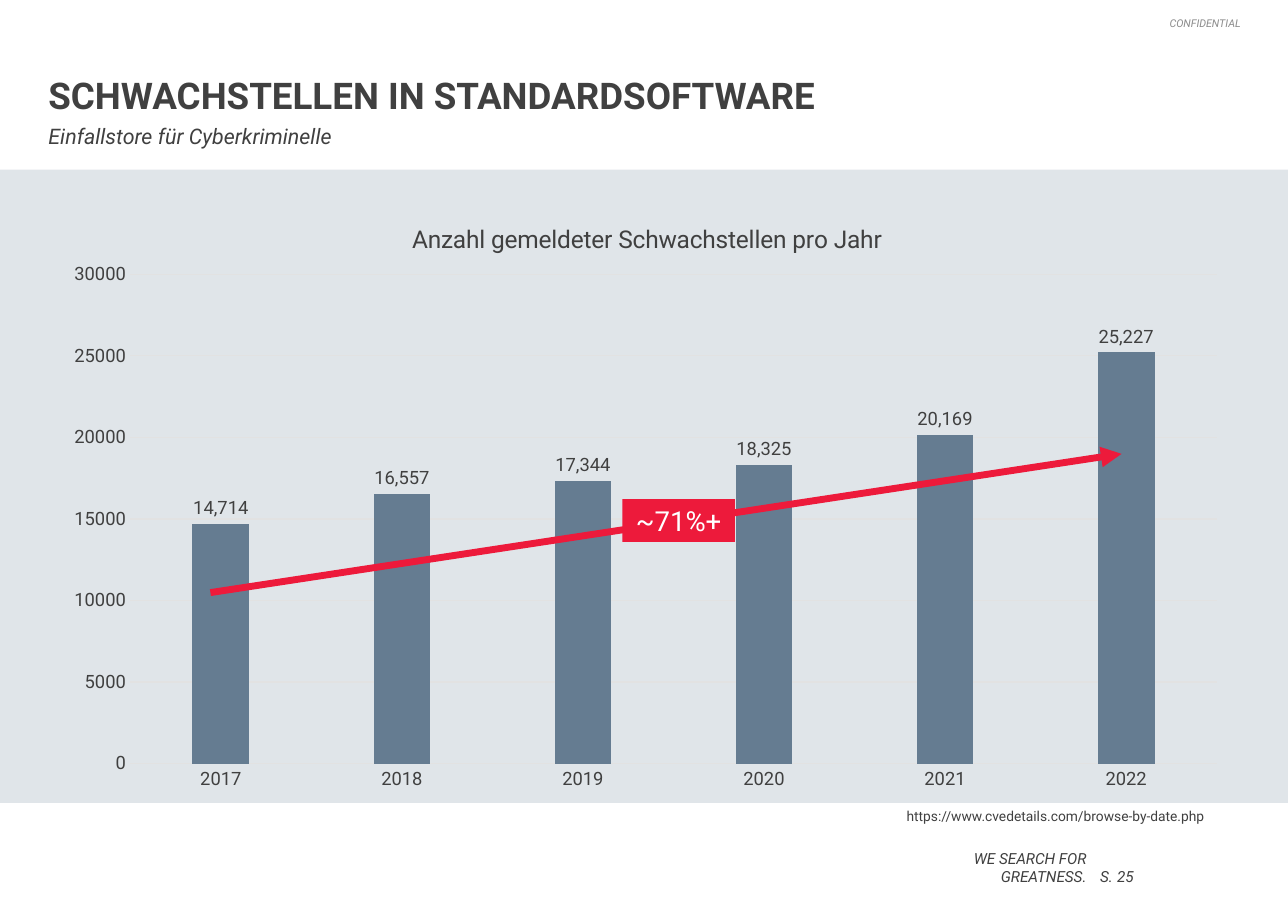
import pptx
import pptx.chart.data
import pptx.dml.color
import pptx.enum.chart
import pptx.enum.shapes
import pptx.enum.text
import pptx.oxml
import pptx.oxml.ns
import pptx.util
import lxml.etree

COLOURS = {
    "text": "404040",
    "band": "E0E5E9",
    "bar": "657C91",
    "grid": "E2E2E2",
    "accent": "ED1A3B",
    "white": "FFFFFF",
}
COLOURS = {name: pptx.dml.color.RGBColor.from_string(value) for name, value in COLOURS.items()}
FONT = "Roboto"
ALIGN = pptx.enum.text.PP_ALIGN
ANCHOR = pptx.enum.text.MSO_ANCHOR
qn = pptx.oxml.ns.qn

deck = pptx.Presentation()
deck.slide_width = pptx.util.Inches(11.69)
deck.slide_height = pptx.util.Inches(8.27)
page = deck.slides.add_slide(deck.slide_layouts[1])


def share(left, top, width, height):
    across, down = deck.slide_width / 100, deck.slide_height / 100
    return [round(part) for part in (left * across, top * down, width * across, height * down)]


def write(box, text, size, align=ALIGN.LEFT, anchor=ANCHOR.TOP, inset=0,
          colour="text", bold=False, italic=False, wrap=True):
    frame = box.text_frame
    frame.auto_size = pptx.enum.text.MSO_AUTO_SIZE.NONE
    frame.word_wrap = wrap
    frame.vertical_anchor = anchor
    frame.margin_left = frame.margin_right = pptx.util.Inches(inset)
    frame.margin_top = frame.margin_bottom = pptx.util.Inches(min(inset, 0.05))
    para = frame.paragraphs[0]
    para.alignment = align
    para.space_before = pptx.util.Pt(0)
    span = para.add_run()
    span.text = text
    span.font.name = FONT
    span.font.size = pptx.util.Pt(size)
    span.font.bold = bold
    span.font.italic = italic
    span.font.color.rgb = COLOURS[colour]
    return para


title = page.shapes.title
title.left, title.top, title.width, title.height = share(3.76, 0, 92.6, 12.82)
heading = write(title, "SCHWACHSTELLEN IN STANDARDSOFTWARE", 24, anchor=ANCHOR.BOTTOM, bold=True)
heading.line_spacing = pptx.util.Pt(25)

subtitle = page.placeholders[1]
subtitle.left, subtitle.top, subtitle.width, subtitle.height = share(3.76, 13.54, 92.6, 3.02)
subheading = write(subtitle, "Einfallstore für Cyberkriminelle", 14, italic=True)
properties = subheading._p.get_or_add_pPr()
properties.set("marL", "0")
properties.set("indent", "0")
lxml.etree.SubElement(properties, qn("a:buNone"))

notice = page.shapes.add_textbox(*share(45.94, 1.81, 50.38, 1.45))
notice_para = write(notice, "CONFIDENTIAL", 7, ALIGN.RIGHT, italic=True)
notice_colour = notice_para._p.find(".//" + qn("a:srgbClr"))
lxml.etree.SubElement(notice_colour, qn("a:alpha"), val="60000")

footers = [
    ("WE SEARCH FOR GREATNESS.", ALIGN.RIGHT, True, (74.08, 93.11, 10.27, 4.11)),
    ("S.", ALIGN.RIGHT, False, (85.37, 95.16, 1.03, 2.06)),
    ("25", ALIGN.LEFT, True, (86.74, 95.16, 2.65, 2.06)),
]
for text, align, wrap, area in footers:
    footer = page.shapes.add_textbox(*share(*area))
    write(footer, text, 10, align, ANCHOR.BOTTOM, italic=True, wrap=wrap)

rectangle = pptx.enum.shapes.MSO_SHAPE.RECTANGLE
band = page.shapes.add_shape(rectangle, *share(0, 18.62, 100, 69.53))
band.shadow.inherit = False
band.fill.solid()
band.fill.fore_color.rgb = COLOURS["band"]
band.line.fill.background()

reports = pptx.chart.data.CategoryChartData(number_format="#,##0")
reports.categories = [str(year) for year in range(2017, 2023)]
reports.add_series("Series 1", [14714, 16557, 17344, 18325, 20169, 25227])
chart = page.shapes.add_chart(
    pptx.enum.chart.XL_CHART_TYPE.COLUMN_CLUSTERED, *share(3.93, 21.4, 92.39, 66.63), reports).chart
chart.has_legend = False
chart.font.name = FONT
chart.font.size = pptx.util.Pt(10)
chart.font.color.rgb = COLOURS["text"]

chart.has_title = True
span = chart.chart_title.text_frame.paragraphs[0].add_run()
span.text = "Anzahl gemeldeter Schwachstellen pro Jahr"
span.font.name = FONT
span.font.size = pptx.util.Pt(16)
span.font.bold = False
span.font.color.rgb = COLOURS["text"]

plot = chart.plots[0]
plot.gap_width = 219
plot.overlap = -27
plot.vary_by_categories = False
bars = plot.series[0].format
bars.fill.solid()
bars.fill.fore_color.rgb = COLOURS["bar"]
plot.has_data_labels = True
labels = plot.data_labels
labels.show_value = True
labels.number_format = "#,##0"
labels.number_format_is_linked = False
labels.position = pptx.enum.chart.XL_LABEL_POSITION.OUTSIDE_END

years, counts = chart.category_axis, chart.value_axis
for axis in (years, counts):
    axis.major_tick_mark = axis.minor_tick_mark = pptx.enum.chart.XL_TICK_MARK.NONE
for texts in (years.tick_labels, counts.tick_labels, labels):
    texts.font.name = FONT
    texts.font.size = pptx.util.Pt(12)
    texts.font.color.rgb = COLOURS["text"]
counts.minimum_scale, counts.maximum_scale, counts.major_unit = 0, 30000, 5000
counts.tick_labels.number_format = "General"
counts.tick_labels.number_format_is_linked = False
counts.format.line.fill.background()
counts.has_major_gridlines = True
for line in (years.format.line, counts.major_gridlines.format.line):
    line.color.rgb = COLOURS["grid"]
    line.width = pptx.util.Pt(0.75)

plot_area = chart._chartSpace.find(".//" + qn("c:plotArea"))
layouts = [
    (chart.chart_title._element, 1, {"xMode": "edge", "yMode": "edge", "x": 0.3, "y": 0.04}),
    (plot_area, 0, {"layoutTarget": "inner", "xMode": "edge", "yMode": "edge",
                    "x": 0.067, "y": 0.131, "w": 0.913, "h": 0.806}),
]
for parent, position, settings in layouts:
    for old in parent.findall(qn("c:layout")):
        parent.remove(old)
    layout = pptx.oxml.parse_xml("<c:layout %s/>" % pptx.oxml.ns.nsdecls("c"))
    manual = lxml.etree.SubElement(layout, qn("c:manualLayout"))
    for name, value in settings.items():
        lxml.etree.SubElement(manual, qn("c:" + name), val=str(value))
    parent.insert(position, layout)

link = page.shapes.add_textbox(*share(69.55, 88.03, 26.69, 3.02))
write(link, "https://www.cvedetails.com/browse-by-date.php", 9, inset=0.1)

arrow = page.shapes.add_connector(
    pptx.enum.shapes.MSO_CONNECTOR.STRAIGHT, *share(16.34, 65.05, 87.08, 49.82))
arrow.line.color.rgb = COLOURS["accent"]
arrow.line.width = pptx.util.Pt(4.5)
lxml.etree.SubElement(arrow.line._get_or_add_ln(), qn("a:tailEnd"), type="triangle")
lxml.etree.SubElement(arrow._element.spPr, qn("a:effectLst"))

badge = page.shapes.add_shape(rectangle, *share(48.33, 54.78, 8.73, 4.72))
badge.shadow.inherit = False
badge.fill.solid()
badge.fill.fore_color.rgb = COLOURS["accent"]
badge.line.fill.background()
write(badge, "~71%+", 18, ALIGN.CENTER, ANCHOR.MIDDLE, 0.04, "white", wrap=False)

deck.save("out.pptx")
